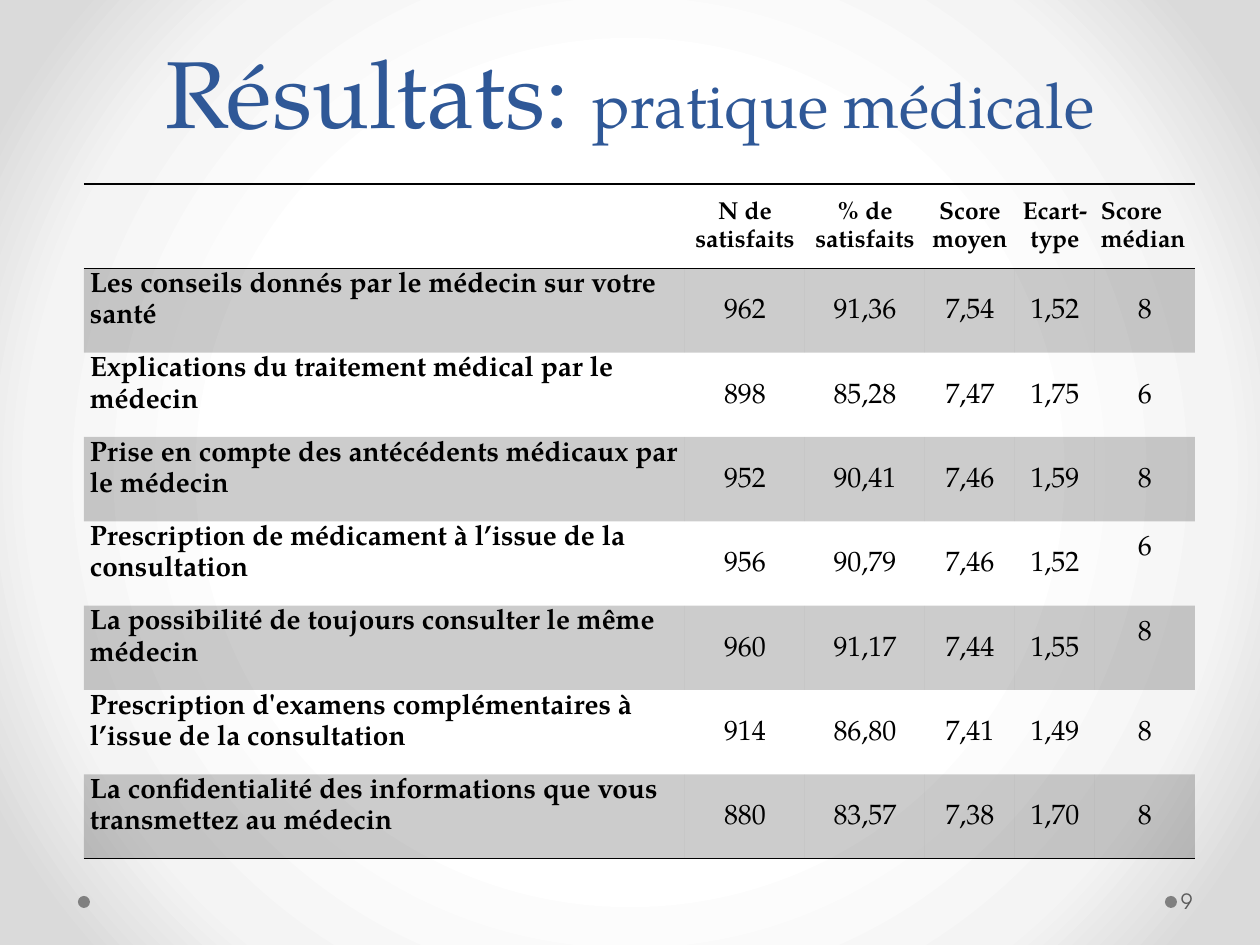
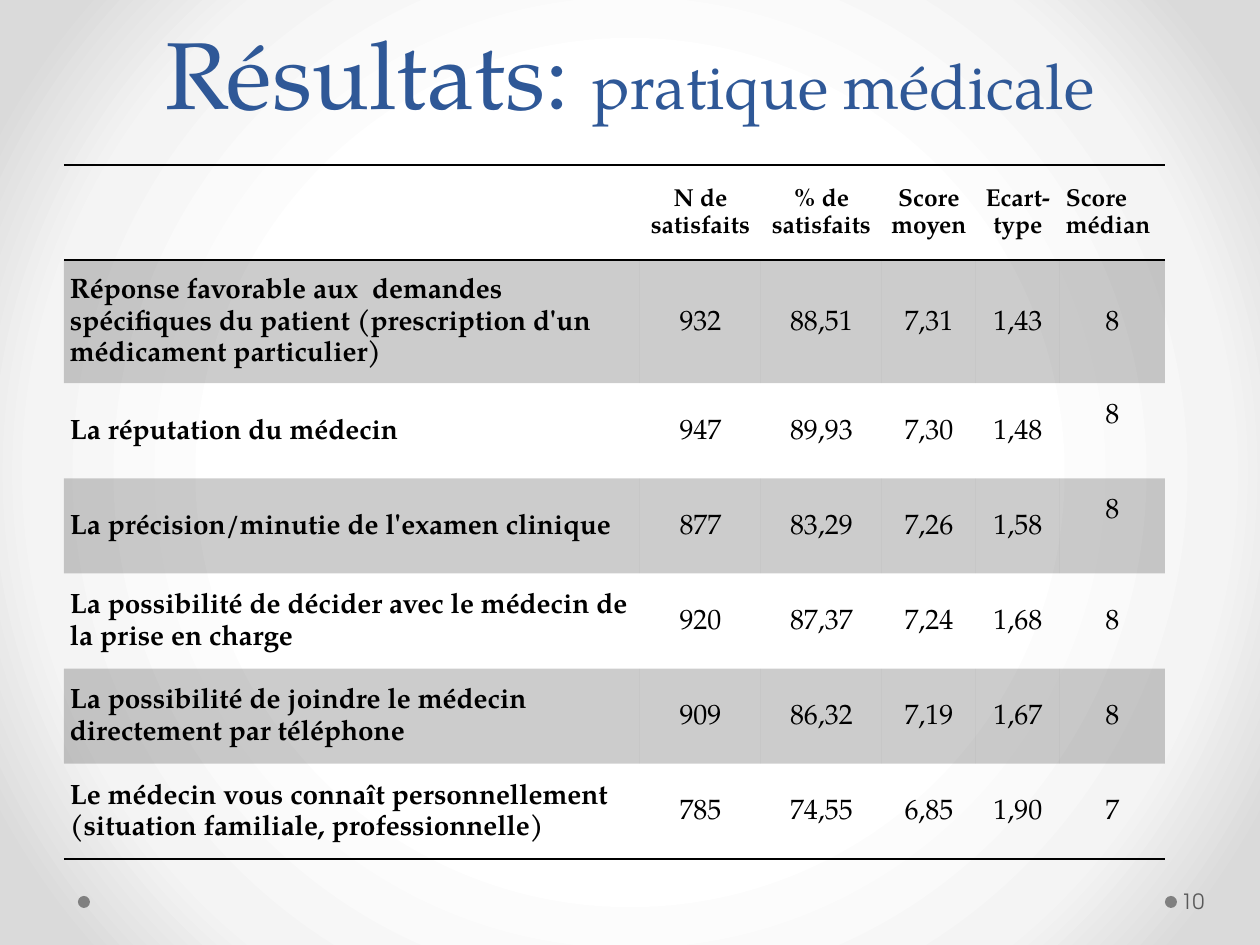
"""Build two result slides on satisfaction with medical practice."""
from pptx import Presentation
from pptx import util as u
from pptx.dml.color import RGBColor
from pptx.enum import shapes, text
from pptx.oxml import parse_xml
from pptx.oxml.ns import nsdecls, qn

TITLE = (("Résultats: ", 54), ("pratique médicale", 36))
HEADERS = ("", "N de satisfaits", "% de satisfaits", "Score moyen", "Ecart-type", "Score médian")
SLIDES = [
    {
        "number": "9",
        "left": 84, "top": 184, "height": 675,
        "columns": (601, 120, 120, 90, 80, 100),
        "label_anchor": text.MSO_ANCHOR.TOP,
        "tall_rows": {},
        "raised_medians": (4, 5),
        "rows": [
            ("Les conseils donnés par le médecin sur votre santé", "962", "91,36", "7,54", "1,52", "8"),
            ("Explications du traitement médical par le médecin", "898", "85,28", "7,47", "1,75", "6"),
            ("Prise en compte des antécédents médicaux par le médecin", "952", "90,41", "7,46", "1,59", "8"),
            ("Prescription de médicament à l’issue de la consultation", "956", "90,79", "7,46", "1,52", "6"),
            ("La possibilité de toujours consulter le même médecin", "960", "91,17", "7,44", "1,55", "8"),
            ("Prescription d'examens complémentaires à l’issue de la consultation",
             "914", "86,80", "7,41", "1,49", "8"),
            ("La confidentialité des informations que vous transmettez au médecin",
             "880", "83,57", "7,38", "1,70", "8"),
        ],
    },
    {
        "number": "10",
        "left": 64, "top": 165, "height": 694,
        "columns": (576, 121, 121, 94, 84, 105),
        "label_anchor": text.MSO_ANCHOR.MIDDLE,
        "tall_rows": {1: 123},
        "raised_medians": (2, 3),
        "rows": [
            ("Réponse favorable aux  demandes spécifiques du patient (prescription d'un médicament particulier)",
             "932", "88,51", "7,31", "1,43", "8"),
            ("La réputation du médecin", "947", "89,93", "7,30", "1,48", "8"),
            ("La précision/minutie de l'examen clinique", "877", "83,29", "7,26", "1,58", "8"),
            ("La possibilité de décider avec le médecin de la prise en charge",
             "920", "87,37", "7,24", "1,68", "8"),
            ("La possibilité de joindre le médecin directement par téléphone",
             "909", "86,32", "7,19", "1,67", "8"),
            ("Le médecin vous connaît personnellement (situation familiale, professionnelle)",
             "785", "74,55", "6,85", "1,90", "7"),
        ],
    },
]

SERIF, SANS = "TeX Gyre Pagella", "TeX Gyre Adventor"
BLACK = RGBColor(0x00, 0x00, 0x00)
TITLE_BLUE = RGBColor(0x2F, 0x58, 0x97)
DOT_GREY = RGBColor(0x80, 0x80, 0x80)
NUMBER_GREY = RGBColor(0x59, 0x59, 0x59)
BACKGROUND_STOPS = (
    (50, RGBColor(0xFF, 0xFF, 0xFF)),
    (76, RGBColor(0xF4, 0xF4, 0xF4)),
    (92, RGBColor(0xDA, 0xDA, 0xDA)),
)
BAND_OPACITY = 20
PLAIN_TABLE_STYLE = "{2D5ABB26-0587-4C30-8999-92F81FD0307C}"

PX_PER_INCH = 126
SLIDE_WIDTH, SLIDE_HEIGHT = 1260, 945
TITLE_LEFT, TITLE_HEIGHT, TITLE_GAP = 63, 128, 30
CELL_MARGIN, LINE_HEIGHT = 6, 32
DOT_LEFTS, DOT_TOP, DOT_SIZE = (78, 1165), 896, 12
NUMBER_BOX = (1177, 876, 77, 50)


def px(length):
    return u.Emu(round(length * u.Inches(1) / PX_PER_INCH))


def style_run(run, font_name, size, color, bold=False):
    font = run.font
    font.name, font.size, font.bold = font_name, u.Pt(size), bold
    font.color.rgb = color


def paint_background(slide):
    slide.background.fill.gradient()
    gradient = next(slide.element.iter(qn("a:gradFill")))
    stops = "".join(
        f'<a:gs pos="{position * 1000}"><a:srgbClr val="{color}"/></a:gs>'
        for position, color in BACKGROUND_STOPS
    )
    gradient.getparent().replace(gradient, parse_xml(
        f'<a:gradFill {nsdecls("a")} rotWithShape="1"><a:gsLst>{stops}</a:gsLst>'
        '<a:path path="circle"><a:fillToRect l="50000" t="50000" r="50000" b="50000"/></a:path>'
        '</a:gradFill>'))


def add_text_box(slide, box, anchor):
    frame = slide.shapes.add_textbox(*map(px, box)).text_frame
    frame.word_wrap = True
    frame.vertical_anchor = anchor
    return frame


def add_title(slide, table_top):
    top = table_top - TITLE_GAP - TITLE_HEIGHT
    box = (TITLE_LEFT, top, SLIDE_WIDTH - 2 * TITLE_LEFT, TITLE_HEIGHT)
    paragraph = add_text_box(slide, box, text.MSO_ANCHOR.BOTTOM).paragraphs[0]
    paragraph.alignment = text.PP_ALIGN.CENTER
    paragraph.line_spacing = u.Pt(58)
    for words, size in TITLE:
        run = paragraph.add_run()
        run.text = words
        style_run(run, SERIF, size, TITLE_BLUE)


def add_footer(slide, number):
    for left in DOT_LEFTS:
        dot = slide.shapes.add_shape(
            shapes.MSO_SHAPE.OVAL, *map(px, (left, DOT_TOP, DOT_SIZE, DOT_SIZE)))
        dot.shadow.inherit = False
        dot.fill.solid()
        dot.fill.fore_color.rgb = DOT_GREY
        dot.line.fill.background()
    frame = add_text_box(slide, NUMBER_BOX, text.MSO_ANCHOR.MIDDLE)
    frame.margin_left, frame.margin_right = px(4), px(6)
    frame.text = number
    style_run(frame.paragraphs[0].runs[0], SANS, 12, NUMBER_GREY)


def draw_border(cell, side):
    cell._tc.get_or_add_tcPr().append(parse_xml(
        f'<a:{side} {nsdecls("a")} w="{u.Pt(1)}"><a:solidFill><a:srgbClr val="{BLACK}"/>'
        f'</a:solidFill></a:{side}>'))


def fill_band(cell):
    cell.fill.solid()
    cell.fill.fore_color.rgb = BLACK
    color = cell._tc.tcPr.find(qn("a:solidFill")).find(qn("a:srgbClr"))
    color.append(parse_xml(f'<a:alpha {nsdecls("a")} val="{BAND_OPACITY * 1000}"/>'))


def write_cell(cell, words, is_header, is_label, is_left):
    cell.margin_left = cell.margin_right = px(CELL_MARGIN)
    cell.margin_top = cell.margin_bottom = 0
    cell.vertical_anchor = text.MSO_ANCHOR.MIDDLE
    cell.text_frame.text = words
    paragraph = cell.text_frame.paragraphs[0]
    paragraph.line_spacing = 1.15
    paragraph.alignment = text.PP_ALIGN.LEFT if is_left else text.PP_ALIGN.CENTER
    for run in paragraph.runs:
        style_run(run, SERIF, 14 if is_header else 16, BLACK, is_header or is_label)


def add_results_table(slide, content):
    rows = [HEADERS, *content["rows"]]
    columns, tall_rows = content["columns"], content["tall_rows"]
    last_row, last_column = len(rows) - 1, len(columns) - 1
    box = (content["left"], content["top"], sum(columns), content["height"])
    table = slide.shapes.add_table(len(rows), len(columns), *map(px, box)).table
    table.first_row = table.horz_banding = False
    table._tbl.tblPr.find(qn("a:tableStyleId")).text = PLAIN_TABLE_STYLE
    for column, width in zip(table.columns, columns):
        column.width = px(width)
    shared_height = (content["height"] - sum(tall_rows.values())) / (len(rows) - len(tall_rows))
    for row_index, row in enumerate(rows):
        table.rows[row_index].height = px(tall_rows.get(row_index, shared_height))
        is_header = row_index == 0
        for column_index, words in enumerate(row):
            cell = table.cell(row_index, column_index)
            is_label = column_index == 0
            is_median = column_index == last_column
            write_cell(cell, words, is_header, is_label, is_label or (is_header and is_median))
            if is_label and not is_header:
                cell.vertical_anchor = content["label_anchor"]
            if is_median and row_index in content["raised_medians"]:
                cell.margin_bottom = px(LINE_HEIGHT)
            if is_header:
                draw_border(cell, "lnT")
            if row_index in (0, last_row):
                draw_border(cell, "lnB")
            if row_index % 2:
                fill_band(cell)


def main():
    presentation = Presentation()
    presentation.slide_width, presentation.slide_height = px(SLIDE_WIDTH), px(SLIDE_HEIGHT)
    for content in SLIDES:
        slide = presentation.slides.add_slide(presentation.slide_layouts[6])
        paint_background(slide)
        add_title(slide, content["top"])
        add_results_table(slide, content)
        add_footer(slide, content["number"])
    presentation.save("out.pptx")


if __name__ == "__main__":
    main()
